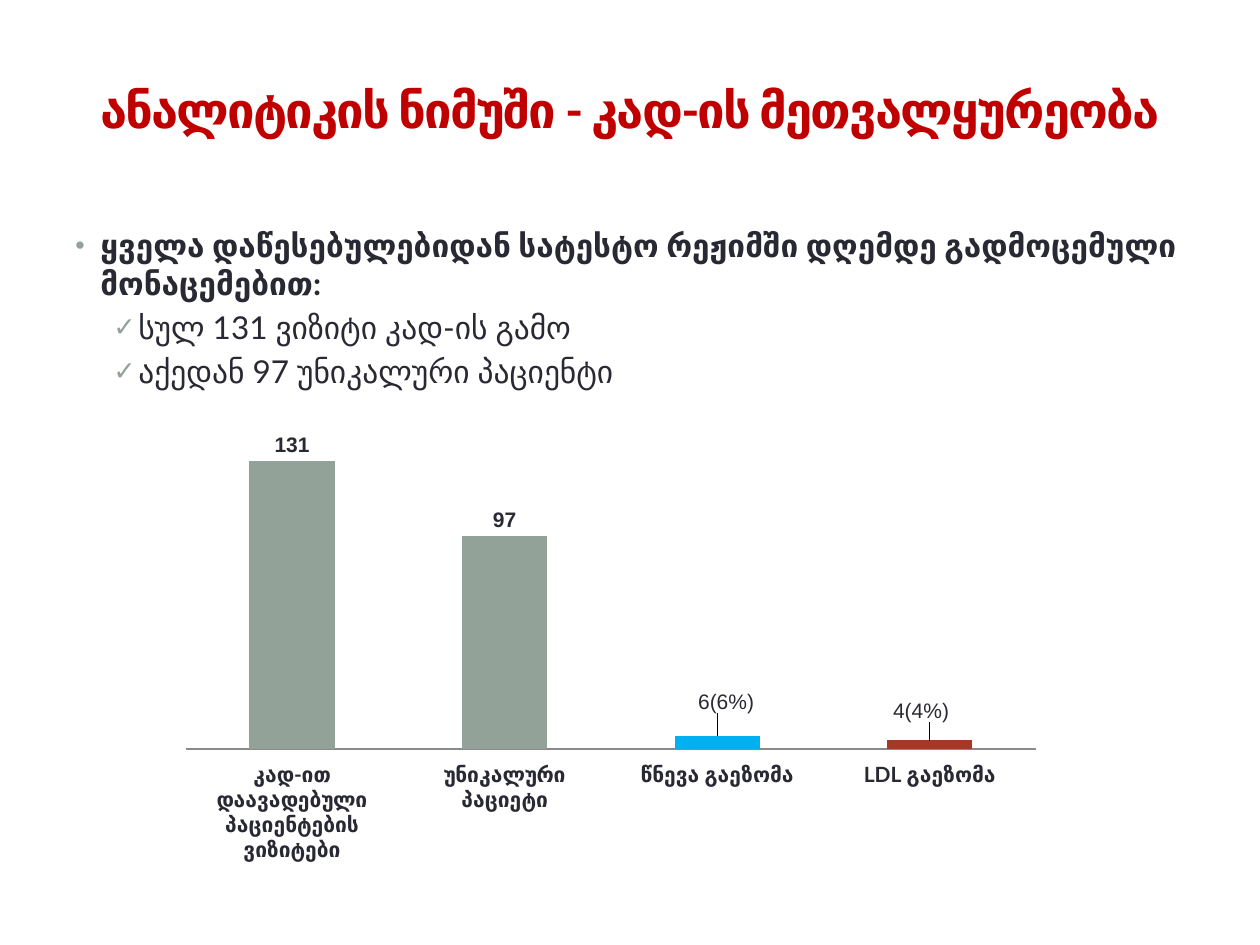
from lxml import etree
from pptx import Presentation
from pptx.chart.data import CategoryChartData
from pptx.dml.color import RGBColor
from pptx.enum.chart import XL_CHART_TYPE, XL_LABEL_POSITION, XL_TICK_LABEL_POSITION, XL_TICK_MARK
from pptx.enum.text import MSO_ANCHOR, PP_ALIGN
from pptx.oxml import parse_xml
from pptx.oxml.ns import nsdecls, qn
from pptx.util import Pt

COLUMN = XL_CHART_TYPE.COLUMN_CLUSTERED
ABOVE = XL_LABEL_POSITION.OUTSIDE_END
LOW = XL_TICK_LABEL_POSITION.LOW
NONE = XL_TICK_MARK.NONE
TOP = MSO_ANCHOR.TOP
CENTER = PP_ALIGN.CENTER

RED, INK, SAGE, GRAY = "C00000", "292934", "93A299", "8A8A8A"
TITLE = "ანალიტიკის ნიმუში - კად-ის მეთვალყურეობა"
LINES = [
    (0, "•", "ყველა დაწესებულებიდან სატესტო რეჟიმში დღემდე გადმოცემული მონაცემებით:"),
    (1, "✓", "სულ 131 ვიზიტი კად-ის გამო"),
    (1, "✓", "აქედან 97 უნიკალური პაციენტი"),
]
BARS = [
    ("კად-ით დაავადებული პაციენტების ვიზიტები", 131),
    ("უნიკალური პაციეტი", 97),
    ("წნევა გაეზომა", 6),
    ("LDL გაეზომა", 4),
]
MARKS = {
    2: ("00B0F0", "6(6%)", {"x": 0.01, "y": -0.04}),
    3: ("A53926", "4(4%)", {"x": -0.01, "y": -0.03}),
}
PLOT = {"layoutTarget": "inner", "xMode": "edge", "yMode": "edge",
        "x": 0.02, "y": 0.02, "w": 0.96, "h": 0.71}
BOXES = {"title": (63, 73, 1134, 136), "body": (63, 220, 1134, 183),
         "chart": (168, 433, 886, 433)}


def px(num):
    return int(num * 914400 / 126)


def rgb(code):
    return RGBColor.from_string(code)


def apply(item, **values):
    for key, value in values.items():
        setattr(item, key, value)


def style(font, size, name, color, bold):
    apply(font, size=Pt(size), name=name, bold=bold)
    font.color.rgb = rgb(color)


def paint(fill, color):
    fill.solid()
    fill.fore_color.rgb = rgb(color)


def add_text(slide, key):
    frame = slide.shapes.add_textbox(*map(px, BOXES[key])).text_frame
    apply(frame, word_wrap=True, vertical_anchor=TOP)
    return frame


def add_run(para, text, size, color, bold):
    run = para.add_run()
    run.text = text
    style(run.font, size, "Lato", color, bold)
    return run


def add_bullet(para, level, mark):
    props = para._p.get_or_add_pPr()
    apply(para, level=level, space_before=Pt(3.6))
    props.set("marL", str(px(25 + 38 * level)))
    props.set("indent", str(px(-25)))
    color = etree.SubElement(props, qn("a:buClr"))
    etree.SubElement(color, qn("a:srgbClr"), val=SAGE)
    etree.SubElement(props, qn("a:buSzPct"), val="85000")
    etree.SubElement(props, qn("a:buFont"), typeface="Arial")
    etree.SubElement(props, qn("a:buChar"), char=mark)


def set_layout(parent, spot, values):
    for old in parent.findall(qn("c:layout")):
        parent.remove(old)
    layout = parse_xml(f"<c:layout {nsdecls('c')}><c:manualLayout/></c:layout>")
    for key, value in values.items():
        etree.SubElement(layout[0], qn(f"c:{key}"), val=str(value))
    parent.insert(spot, layout)


def add_chart(slide):
    data = CategoryChartData()
    data.categories = [name for name, _ in BARS]
    data.add_series("Series 1", [value for _, value in BARS])
    chart = slide.shapes.add_chart(COLUMN, *map(px, BOXES["chart"]), data).chart
    apply(chart, has_legend=False, has_title=False)
    style(chart.font, 12, "Arial", INK, True)

    apply(chart.value_axis, visible=False, has_major_gridlines=False,
          minimum_scale=0, maximum_scale=140)
    axis = chart.category_axis
    apply(axis, major_tick_mark=NONE, minor_tick_mark=NONE, tick_label_position=LOW)
    style(axis.tick_labels.font, 12, "Lato", INK, True)
    paint(axis.format.line.fill, GRAY)

    plot = chart.plots[0]
    apply(plot, gap_width=150, vary_by_categories=False)
    series = plot.series[0]
    paint(series.format.fill, SAGE)
    labels = series.data_labels
    apply(labels, show_value=True, position=ABOVE)
    style(labels.font, 12, "Arial", INK, True)
    for spot, (color, text, _) in MARKS.items():
        point = series.points[spot]
        paint(point.format.fill, color)
        label = point.data_label
        run = label.text_frame.paragraphs[0].add_run()
        run.text = text
        style(run.font, 12, "Arial", INK, False)
        label.position = ABOVE

    root = chart._chartSpace
    set_layout(root.find(".//" + qn("c:plotArea")), 0, PLOT)
    for node, (_, _, shift) in zip(root.findall(".//" + qn("c:dLbl")), MARKS.values()):
        set_layout(node, 1, shift)


def main():
    """Build the visit analysis slide with its title, bullets and column chart."""
    deck = Presentation()
    apply(deck, slide_width=px(1260), slide_height=px(945))
    slide = deck.slides.add_slide(deck.slide_layouts[6])

    para = add_text(slide, "title").paragraphs[0]
    para.alignment = CENTER
    run = add_run(para, TITLE, 28, RED, True)
    run.font._element.set("spc", "-100")

    frame = add_text(slide, "body")
    for spot, (level, mark, text) in enumerate(LINES):
        para = frame.add_paragraph() if spot else frame.paragraphs[0]
        add_bullet(para, level, mark)
        add_run(para, text, 18, INK, level == 0)

    add_chart(slide)
    deck.save("out.pptx")


if __name__ == "__main__":
    main()
